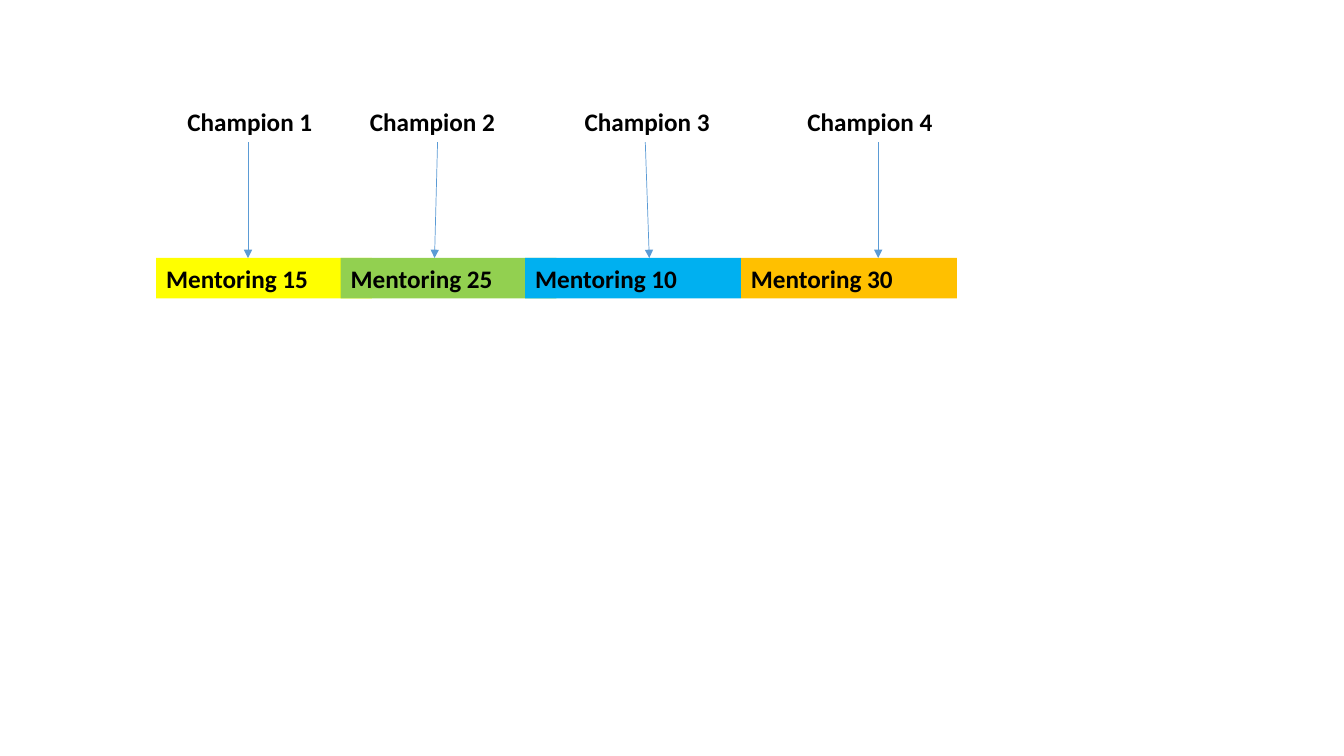
"""Build a slide of four champions pointing at a row of mentoring bars."""
import dataclasses

import lxml.etree
import pptx
import pptx.dml.color
import pptx.enum.shapes
import pptx.enum.text
import pptx.oxml.ns
import pptx.util


@dataclasses.dataclass(frozen=True)
class Theme:
    font: str = "Calibri"
    size: float = 18
    ink: str = "000000"
    arrow: str = "5B9BD5"
    arrow_width: float = 0.5
    yellow: str = "FFFF00"
    green: str = "92D050"
    blue: str = "00B0F0"
    orange: str = "FFC000"


def color(code):
    return pptx.dml.color.RGBColor.from_string(code)


class Page:
    CELL = 0.1
    BOX_COLUMNS, BOX_ROWS = 21.4, 4

    def __init__(self, deck, theme):
        self.theme = theme
        self.shapes = deck.slides.add_slide(deck.slide_layouts[6]).shapes

    def cells(self, *counts):
        return [pptx.util.Inches(count * self.CELL) for count in counts]

    def set_text(self, box, text):
        frame = box.text_frame
        frame.word_wrap = True
        frame.auto_size = pptx.enum.text.MSO_AUTO_SIZE.SHAPE_TO_FIT_TEXT
        para = frame.paragraphs[0]
        para.text = text
        para.alignment = pptx.enum.text.PP_ALIGN.LEFT
        para.font.name = self.theme.font
        para.font.size = pptx.util.Pt(self.theme.size)
        para.font.bold = True
        para.font.color.rgb = color(self.theme.ink)

    def label(self, column, row, text):
        place = self.cells(column, row, self.BOX_COLUMNS, self.BOX_ROWS)
        self.set_text(self.shapes.add_textbox(*place), text)

    def bar(self, column, row, text, fill):
        place = self.cells(column, row, self.BOX_COLUMNS, self.BOX_ROWS)
        box = self.shapes.add_shape(pptx.enum.shapes.MSO_SHAPE.RECTANGLE, *place)
        box.shadow.inherit = False
        box.fill.solid()
        box.fill.fore_color.rgb = color(fill)
        box.line.fill.background()
        self.set_text(box, text)

    def arrow(self, start_column, start_row, end_column, end_row):
        ends = self.cells(start_column, start_row, end_column, end_row)
        arrow = self.shapes.add_connector(
            pptx.enum.shapes.MSO_CONNECTOR.STRAIGHT, *ends)
        arrow.line.color.rgb = color(self.theme.arrow)
        arrow.line.width = pptx.util.Pt(self.theme.arrow_width)
        qualify = pptx.oxml.ns.qn
        properties = arrow.element.spPr
        lxml.etree.SubElement(
            properties.find(qualify("a:ln")), qualify("a:tailEnd"), type="triangle")
        lxml.etree.SubElement(properties, qualify("a:effectLst"))


def main():
    deck = pptx.Presentation()
    deck.slide_width = pptx.util.Inches(13.33)
    deck.slide_height = pptx.util.Inches(7.5)
    theme = Theme()
    page = Page(deck, theme)

    label_row, arrow_row, bar_row = 10.1, 14.1, 25.6
    label_columns = (17.6, 35.7, 57, 79.1)
    bars = (
        (15.5, 15, theme.yellow),
        (33.8, 25, theme.green),
        (52.1, 10, theme.blue),
        (73.5, 30, theme.orange),
    )
    arrows = ((24.6, 24.6), (43.4, 43.1), (64, 64.4), (87.1, 87.1))

    for number, column in enumerate(label_columns, start=1):
        page.label(column, label_row, f"Champion {number}")
    for column, amount, fill in bars:
        page.bar(column, bar_row, f"Mentoring {amount}", fill)
    for start, end in arrows:
        page.arrow(start, arrow_row, end, bar_row)

    deck.save("out.pptx")


if __name__ == "__main__":
    main()
